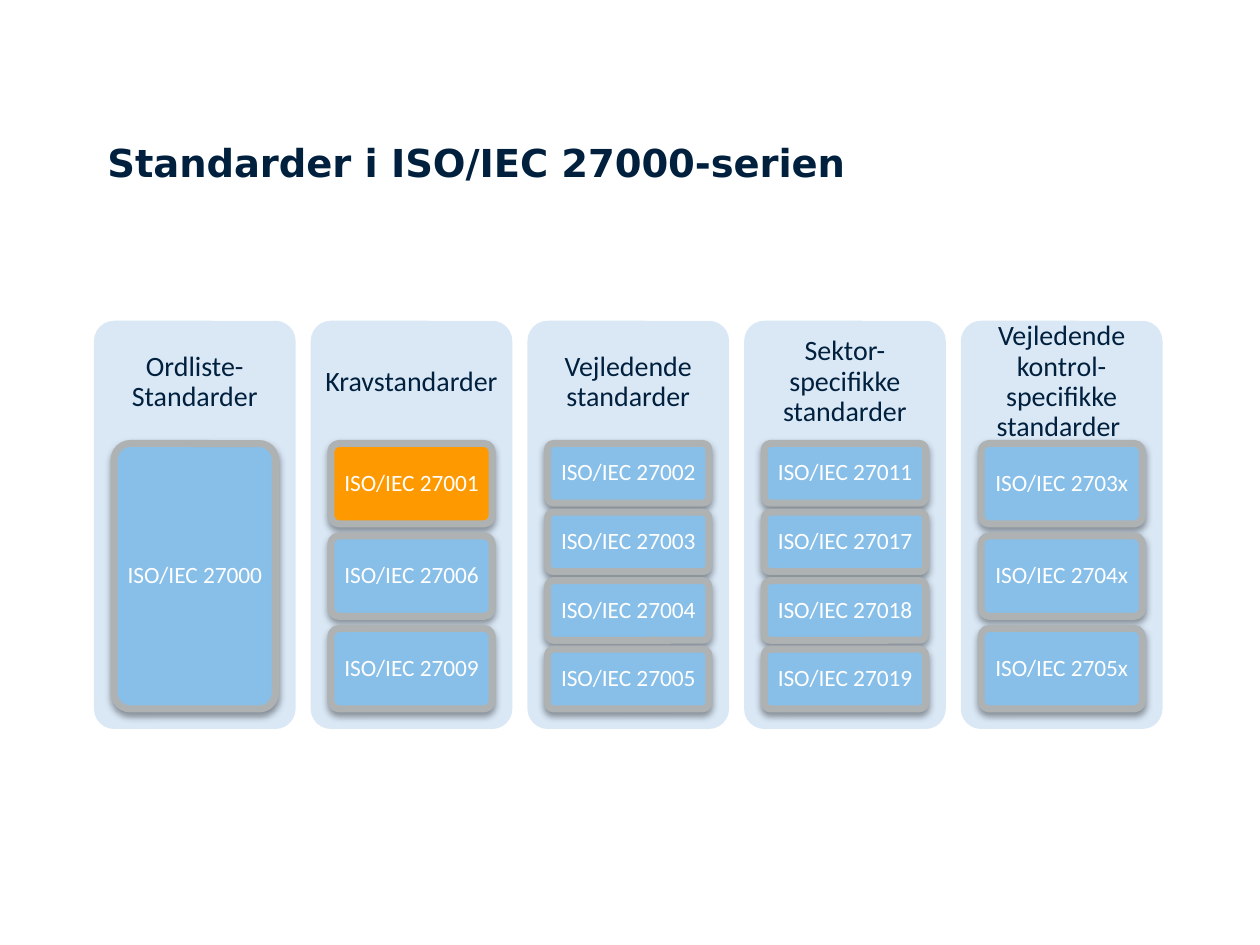
import pptx
import pptx.dml.color
import pptx.enum.shapes
import pptx.enum.text
import pptx.oxml.ns
import pptx.util
from lxml import etree
from pptx.util import Inches

NAVY = pptx.dml.color.RGBColor(0x00, 0x20, 0x3D)
PALE_BLUE = pptx.dml.color.RGBColor(0xDA, 0xE8, 0xF6)
BLUE = pptx.dml.color.RGBColor(0x88, 0xBF, 0xE8)
ORANGE = pptx.dml.color.RGBColor(0xFF, 0x99, 0x00)
GREY = pptx.dml.color.RGBColor(0xAE, 0xB2, 0xB2)
WHITE = pptx.dml.color.RGBColor(0xFF, 0xFF, 0xFF)

PAGE_WIDTH = 7.5
LEFT, TOP = 0.56, 1.91
COLUMN_WIDTH, COLUMN_HEIGHT, COLUMN_PITCH = 1.2, 2.43, 1.29
HEADER_HEIGHT = 0.73
CARD_INSET, CARD_WIDTH, CARDS_HEIGHT = 0.12, 0.96, 1.58
GAP_RATIO = 0.15  # gap between cards as a share of card height

HIGHLIGHTED = "ISO/IEC 27001"
COLUMNS = [
    ("Ordliste-Standarder", ["ISO/IEC 27000"]),
    ("Kravstandarder", [HIGHLIGHTED, "ISO/IEC 27006", "ISO/IEC 27009"]),
    ("Vejledende standarder",
     ["ISO/IEC 27002", "ISO/IEC 27003", "ISO/IEC 27004", "ISO/IEC 27005"]),
    ("Sektor-specifikke standarder",
     ["ISO/IEC 27011", "ISO/IEC 27017", "ISO/IEC 27018", "ISO/IEC 27019"]),
    ("Vejledende kontrol-specifikke standarder ",
     ["ISO/IEC 2703x", "ISO/IEC 2704x", "ISO/IEC 2705x"]),
]


def write_text(box, text, size, color, font="Calibri", bold=False, align="CENTER",
               anchor="MIDDLE", spacing=0.9, margins=(0, 0, 0, 0)):
    frame = box.text_frame
    frame.word_wrap = True
    frame.auto_size = pptx.enum.text.MSO_AUTO_SIZE.NONE
    frame.vertical_anchor = pptx.enum.text.MSO_ANCHOR[anchor]
    (frame.margin_left, frame.margin_top,
     frame.margin_right, frame.margin_bottom) = map(Inches, margins)
    para = frame.paragraphs[0]
    para.alignment = pptx.enum.text.PP_ALIGN[align]
    para.line_spacing = spacing
    span = para.add_run()
    span.text = text
    span.font.name = font
    span.font.size = pptx.util.Pt(size)
    span.font.bold = bold
    span.font.color.rgb = color


def add_panel(page, left, top, width, height, fill):
    panel = page.shapes.add_shape(
        pptx.enum.shapes.MSO_SHAPE.ROUNDED_RECTANGLE,
        Inches(left), Inches(top), Inches(width), Inches(height))
    panel.adjustments[0] = 0.1
    panel.shadow.inherit = False
    panel.fill.solid()
    panel.fill.fore_color.rgb = fill
    panel.line.fill.background()
    return panel


def add_shadow(shape):
    qn = pptx.oxml.ns.qn
    effects = shape.element.spPr.find(qn("a:effectLst"))
    shadow = etree.SubElement(
        effects, qn("a:outerShdw"), blurRad=str(pptx.util.Pt(3.1)),
        dist=str(pptx.util.Pt(1.6)), dir="5400000", rotWithShape="0")
    color = etree.SubElement(shadow, qn("a:srgbClr"), val="000000")
    etree.SubElement(color, qn("a:alpha"), val="38000")


def add_card(page, text, left, top, height):
    fill = ORANGE if text == HIGHLIGHTED else BLUE
    card = add_panel(page, left, top, CARD_WIDTH, height, fill)
    card.line.color.rgb = GREY
    card.line.width = pptx.util.Pt(3)
    add_shadow(card)
    write_text(card, text, 10, WHITE, margins=(0.03, 0.02, 0.03, 0.02))


def add_column(page, left, heading, standards):
    add_panel(page, left, TOP, COLUMN_WIDTH, COLUMN_HEIGHT, PALE_BLUE)
    header = page.shapes.add_textbox(
        Inches(left), Inches(TOP), Inches(COLUMN_WIDTH), Inches(HEADER_HEIGHT))
    write_text(header, heading, 12, NAVY, margins=(0.05, 0.05, 0.05, 0.05))

    # Cards share the same total height in every column
    count = len(standards)
    height = CARDS_HEIGHT / (count + GAP_RATIO * (count - 1))
    for row, standard in enumerate(standards):
        top = TOP + HEADER_HEIGHT + row * height * (1 + GAP_RATIO)
        add_card(page, standard, left + CARD_INSET, top, height)


def add_title(page, text):
    title = page.shapes.title
    title.left, title.top = Inches(LEFT), Inches(0.83)
    title.width, title.height = Inches(6.36), Inches(0.61)
    write_text(title, text, 16.5, NAVY, font="DejaVu Sans", bold=True, align="LEFT",
               anchor="TOP", spacing=1.0, margins=(0.08, 0, 0, 0))


def main():
    # Page in 4:3 format
    deck = pptx.Presentation()
    deck.slide_width = Inches(PAGE_WIDTH)
    deck.slide_height = Inches(PAGE_WIDTH * 3 / 4)
    page = deck.slides.add_slide(deck.slide_layouts[5])  # Title Only

    # Title and columns of standards
    add_title(page, "Standarder i ISO/IEC 27000-serien")
    for index, (heading, standards) in enumerate(COLUMNS):
        add_column(page, LEFT + index * COLUMN_PITCH, heading, standards)

    deck.save("out.pptx")


if __name__ == "__main__":
    main()
